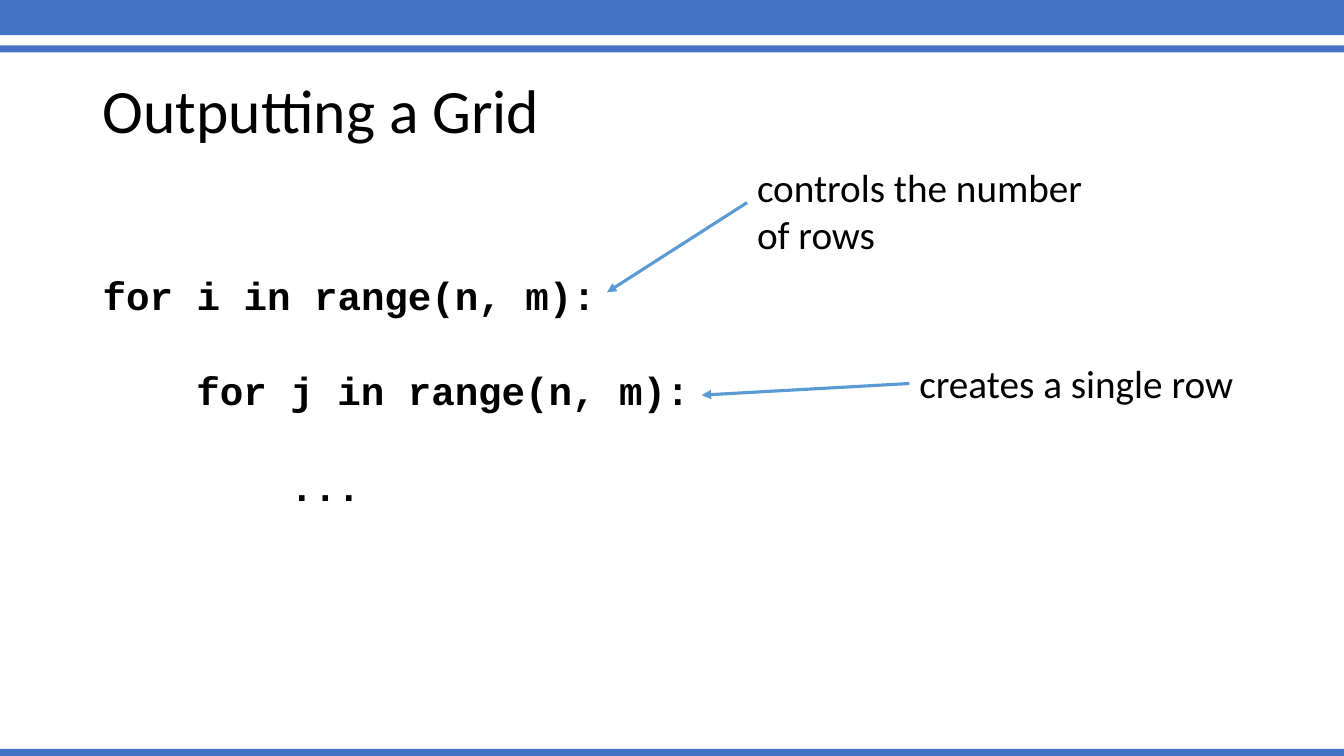
from dataclasses import dataclass

import pptx
import pptx.dml.color
import pptx.enum.shapes
import pptx.enum.text
import pptx.oxml.ns
import pptx.util
from lxml import etree

Inches = pptx.util.Inches
Pt = pptx.util.Pt
RGB = pptx.dml.color.RGBColor
qn = pptx.oxml.ns.qn


@dataclass(frozen=True)
class Theme:
    bar: RGB = RGB(0x44, 0x72, 0xC4)
    arrow: RGB = RGB(0x5B, 0x9B, 0xD5)
    text: RGB = RGB(0, 0, 0)
    body_font: str = "Calibri"
    code_font: str = "Courier New"
    title_size: Pt = Pt(44)
    body_size: Pt = Pt(28)
    arrow_width: Pt = Pt(2.25)


THEME = Theme()
SLIDE_W, SLIDE_H = 13.33, 7.5
CODE_INDENT = 0.93
CODE_LINES = [
    (0, "for i in range(n, m):", True),
    (1, "for j in range(n, m):", True),
    (2, "...", True),
]


def add_bar(s, top, height):
    sp = s.shapes.add_shape(pptx.enum.shapes.MSO_SHAPE.RECTANGLE,
                            0, Inches(top), Inches(SLIDE_W), Inches(height))
    sp.shadow.inherit = False
    sp.fill.solid()
    sp.fill.fore_color.rgb = THEME.bar
    sp.line.fill.background()


def add_box(s, left, top, width, height):
    sp = s.shapes.add_textbox(Inches(left), Inches(top), Inches(width), Inches(height))
    sp.text_frame.word_wrap = True
    return sp


def add_run(p, text, size, font, bold=False):
    r = p.add_run()
    r.text = text
    r.font.size = size
    r.font.name = font
    r.font.bold = bold
    r.font.color.rgb = THEME.text


def add_title(s, text):
    tf = add_box(s, 0.92, 0.4, 11.5, 1.45).text_frame
    tf.vertical_anchor = pptx.enum.text.MSO_ANCHOR.MIDDLE
    p = tf.paragraphs[0]
    p.line_spacing = 0.9
    add_run(p, text, THEME.title_size, THEME.body_font)


def add_code(s, lines):
    tf = add_box(s, 0.92, 2.77, 11.5, 3.99).text_frame
    for i, (level, text, bold) in enumerate(lines):
        p = tf.add_paragraph() if i else tf.paragraphs[0]
        p.line_spacing = 0.7
        p.space_before = Pt(44.5 if i else 10)
        p._p.get_or_add_pPr().set("marL", str(Inches(level * CODE_INDENT)))
        add_run(p, text, THEME.body_size, THEME.code_font, bold)


def add_note(s, text, left, top, width, height):
    sp = add_box(s, left, top, width, height)
    add_run(sp.text_frame.paragraphs[0], text, THEME.body_size, THEME.body_font)
    return sp


def add_arrow(s, start, end, note=None):
    cx = s.shapes.add_connector(pptx.enum.shapes.MSO_CONNECTOR.STRAIGHT,
                                *(Inches(v) for v in start + end))
    if note is not None:
        cx.begin_connect(note, 1)
    cx.line.color.rgb = THEME.arrow
    cx.line.width = THEME.arrow_width
    etree.SubElement(cx.line._get_or_add_ln(), qn("a:tailEnd"), type="triangle")
    etree.SubElement(cx._element.spPr, qn("a:effectLst"))


def main():
    prs = pptx.Presentation()
    prs.slide_width, prs.slide_height = Inches(SLIDE_W), Inches(SLIDE_H)
    s = prs.slides.add_slide(prs.slide_layouts[6])
    for top, height in [(0, 0.35), (0.45, 0.07), (7.43, 0.07)]:
        add_bar(s, top, height)
    add_title(s, "Outputting a Grid")
    add_code(s, CODE_LINES)
    row_note = add_note(s, "creates a single row", 9.02, 3.52, 3.47, 0.57)
    add_note(s, "controls the number of rows", 7.41, 1.57, 3.61, 1.04)
    add_arrow(s, (9.02, 3.8), (6.96, 3.92), row_note)
    add_arrow(s, (7.41, 2.01), (6.02, 2.9))
    prs.save("out.pptx")


if __name__ == "__main__":
    main()
